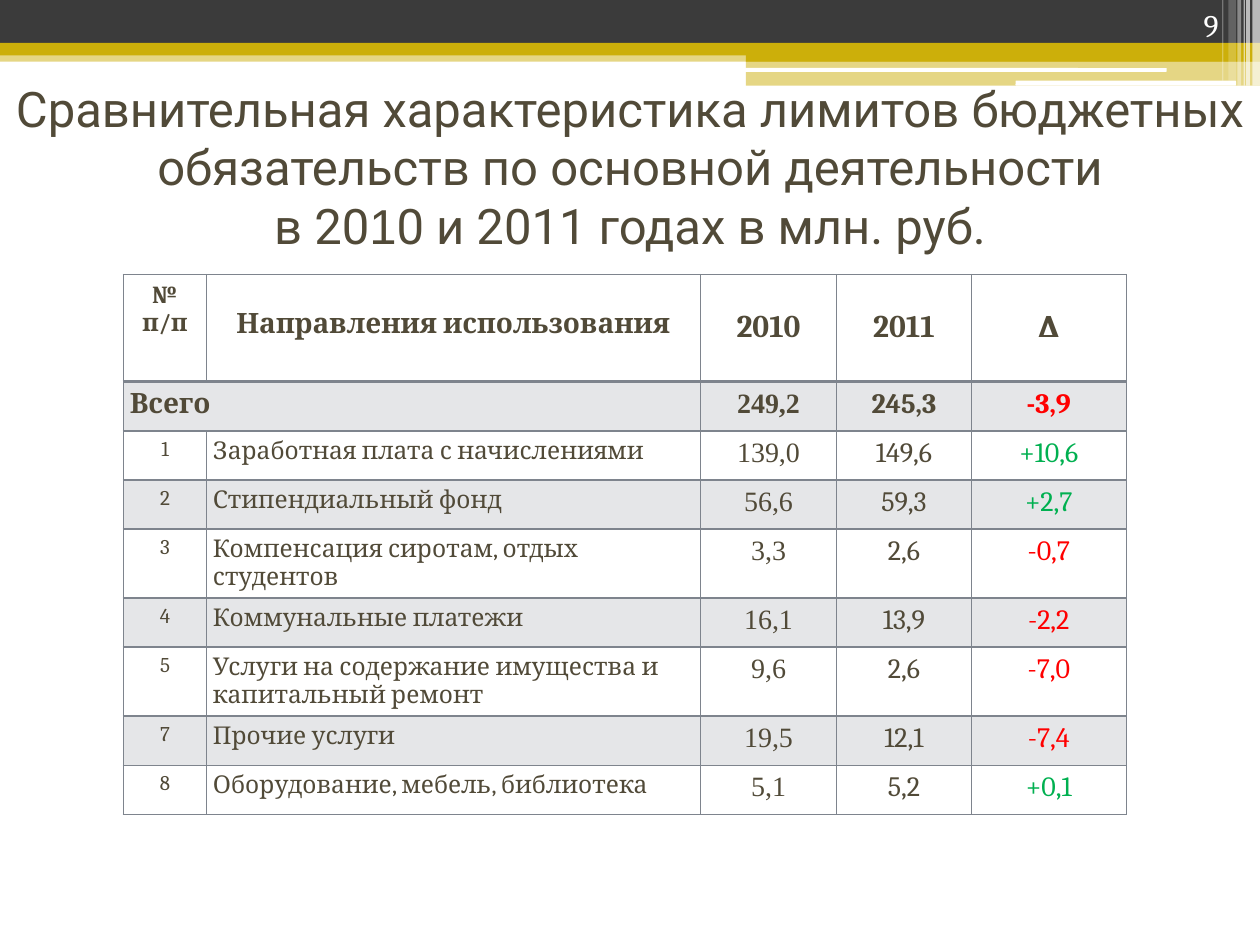
from lxml import etree
from pptx import Presentation
from pptx.dml.color import RGBColor
from pptx.enum.shapes import MSO_SHAPE
from pptx.enum.text import MSO_ANCHOR, PP_ALIGN
from pptx.oxml.ns import qn
from pptx.util import Emu, Inches, Pt

RECTANGLE, ROUNDED = MSO_SHAPE.RECTANGLE, MSO_SHAPE.ROUNDED_RECTANGLE
LEFT, CENTER, RIGHT = PP_ALIGN.LEFT, PP_ALIGN.CENTER, PP_ALIGN.RIGHT
TOP, MIDDLE, BOTTOM = MSO_ANCHOR.TOP, MSO_ANCHOR.MIDDLE, MSO_ANCHOR.BOTTOM
WIDTH, HEIGHT = Inches(10), Inches(7.5)
INK, GOLD, DARK, WHITE, GRAY = "514A38", "CCAF0A", "3B3B3B", "FFFFFF", "7E848D"
RED, GREEN = "FF0000", "00B050"
SERIF, ROMAN = "Cambria", "Times New Roman"

BANDS = [
    (RECTANGLE, (0, 5.33, 100, 1.2), GOLD, 50),
    (RECTANGLE, (0, 0, 100, 4.53), DARK, 100),
    (RECTANGLE, (0, 4.53, 100, 1.33), GOLD, 100),
    (RECTANGLE, (59.2, 5.2, 40.8, 1.33), GOLD, 100),
    (RECTANGLE, (59.2, 6.4, 40.8, 2.67), GOLD, 50),
    (ROUNDED, (59.1, 7.2, 33.5, 0.4), WHITE, 100),
    (ROUNDED, (80.6, 8.53, 17.5, 0.53), WHITE, 100),
]
STRIPES = [
    (99.4, 0.6, 9.07, 65),
    (98.9, 0.3, 9.07, 65),
    (98.7, 0.1, 9.07, 60),
    (98.2, 0.3, 9.07, 40),
    (97.5, 0.6, 8.53, 20),
    (97, 0.1, 8.53, 30),
]
TITLE = [
    ("Сравнительная характеристика лимитов бюджетных "
     "обязательств по основной деятельности\vв 20", "Roboto"),
    ("1", "Arial"),
    ("0 и 2011 годах в млн. руб.", "Roboto"),
]
COLUMNS = [6.6, 39.2, 10.8, 10.7, 12.3]
HEADER_HEIGHT, ROW_HEIGHT = 11.33, 5.2
HEADERS = [("№ п/п", 14), ("Направления использования", 16), ("2010", 18), ("2011", 18), ("∆", 18)]
ROWS = [
    ("Всего", "", "249,2", "245,3", "-3,9"),
    ("1", "Заработная плата с начислениями", "139,0", "149,6", "+10,6"),
    ("2", "Стипендиальный фонд", "56,6", "59,3", "+2,7"),
    ("3", "Компенсация сиротам, отдых студентов", "3,3", "2,6", "-0,7"),
    ("4", "Коммунальные платежи", "16,1", "13,9", "-2,2"),
    ("5", "Услуги на содержание имущества и капитальный ремонт", "9,6", "2,6", "-7,0"),
    ("7", "Прочие услуги", "19,5", "12,1", "-7,4"),
    ("8", "Оборудование, мебель, библиотека", "5,1", "5,2", "+0,1"),
]
COLUMN_FORMATS = [(12, SERIF, CENTER), (14, SERIF, LEFT), (16, ROMAN, CENTER),
                  (16, SERIF, CENTER), (16, SERIF, CENTER)]


def across(percent):
    """Return a share of the slide width."""
    return Emu(round(WIDTH * percent / 100))


def down(percent):
    """Return a share of the slide height."""
    return Emu(round(HEIGHT * percent / 100))


def place(box):
    """Turn percentages into left, top, width and height."""
    left, top, width, height = box
    return across(left), down(top), across(width), down(height)


def color(code):
    """Return the colour for a hex string."""
    return RGBColor.from_string(code)


def paint(target, element, code, opacity=100):
    """Fill a shape or an empty cell with a colour of the given opacity."""
    target.fill.solid()
    target.fill.fore_color.rgb = color(code)
    if opacity < 100:
        solid = element.xpath(".//a:solidFill/a:srgbClr")[0]
        etree.SubElement(solid, qn("a:alpha"), val=str(opacity * 1000))


def write(frame, text, size=16, font=SERIF, code=INK, bold=False, align=CENTER):
    """Append formatted text to the first paragraph, breaking lines at tabs."""
    paragraph = frame.paragraphs[0]
    paragraph.alignment = align
    for index, line in enumerate(text.split("\v")):
        if index:
            paragraph.add_line_break()
        run = paragraph.add_run()
        run.text = line
        run.font.size = Pt(size)
        run.font.name = font
        run.font.bold = bold
        run.font.color.rgb = color(code)


def add_band(slide, kind, box, code, opacity):
    """Draw one plain shape of the heading decoration."""
    shape = slide.shapes.add_shape(kind, *place(box))
    shape.shadow.inherit = False
    shape.line.fill.background()
    paint(shape, shape._element, code, opacity)


def add_box(slide, box, anchor):
    """Add a wrapping text box and return its text frame."""
    frame = slide.shapes.add_textbox(*place(box)).text_frame
    frame.word_wrap = True
    frame.vertical_anchor = anchor
    return frame


def set_borders(cell, top=1, bottom=1):
    """Outline a cell with widths in points."""
    properties = cell._tc.get_or_add_tcPr()
    widths = {"lnL": 1, "lnR": 1, "lnT": top, "lnB": bottom}
    for index, (side, width) in enumerate(widths.items()):
        line = etree.Element(qn(f"a:{side}"), w=str(Pt(width)))
        solid = etree.SubElement(line, qn("a:solidFill"))
        etree.SubElement(solid, qn("a:srgbClr"), val=GRAY)
        properties.insert(index, line)


def prepare(cell, shaded, top=1, bottom=1):
    """Set the fill, borders and margins of a cell."""
    if shaded:
        paint(cell, cell._tc, GRAY, 20)
    else:
        cell.fill.background()
    set_borders(cell, top, bottom)
    cell.vertical_anchor = TOP
    cell.margin_left = cell.margin_right = Inches(0.05)
    cell.margin_top = cell.margin_bottom = Inches(0.05)


def add_budget_table(slide):
    """Add the table that compares both years."""
    box = (9.8, 29.07, sum(COLUMNS), HEADER_HEIGHT + ROW_HEIGHT * len(ROWS))
    table = slide.shapes.add_table(len(ROWS) + 1, len(COLUMNS), *place(box)).table
    table.first_row = table.horz_banding = False
    for column, width in zip(table.columns, COLUMNS):
        column.width = across(width)
    for index, row in enumerate(table.rows):
        row.height = down(ROW_HEIGHT if index else HEADER_HEIGHT)
    for index, (text, size) in enumerate(HEADERS):
        cell = table.cell(0, index)
        prepare(cell, False, bottom=2)
        if index:
            cell.margin_top = Inches(0.27)
        write(cell.text_frame, text, size=size, bold=True)
    for number, values in enumerate(ROWS, 1):
        total = number == 1
        for index, (text, style) in enumerate(zip(values, COLUMN_FORMATS)):
            cell = table.cell(number, index)
            prepare(cell, number % 2 == 1, top=2 if total else 1)
            size, font, align = (16, SERIF, LEFT) if total and index == 0 else style
            code = INK
            if index == len(COLUMNS) - 1:
                code = GREEN if text.startswith("+") else RED
            if text:
                write(cell.text_frame, text, size=size, font=font, code=code,
                      bold=total, align=align)
    table.cell(1, 0).merge(table.cell(1, 1))


def main():
    """Build and save the slide."""
    presentation = Presentation()
    presentation.slide_width, presentation.slide_height = WIDTH, HEIGHT
    slide = presentation.slides.add_slide(presentation.slide_layouts[6])
    for band in BANDS:
        add_band(slide, *band)
    for left, width, height, opacity in STRIPES:
        add_band(slide, RECTANGLE, (left, 0, width, height), WHITE, opacity)
    add_budget_table(slide)
    title = add_box(slide, (0, 12.4, 100, 10.4), MIDDLE)
    for text, font in TITLE:
        write(title, text, size=28, font=font)
    page_number = add_box(slide, (89.4, 0, 8.3, 5.33), BOTTOM)
    write(page_number, "9", size=18, code=WHITE, align=RIGHT)
    presentation.save("out.pptx")


if __name__ == "__main__":
    main()
